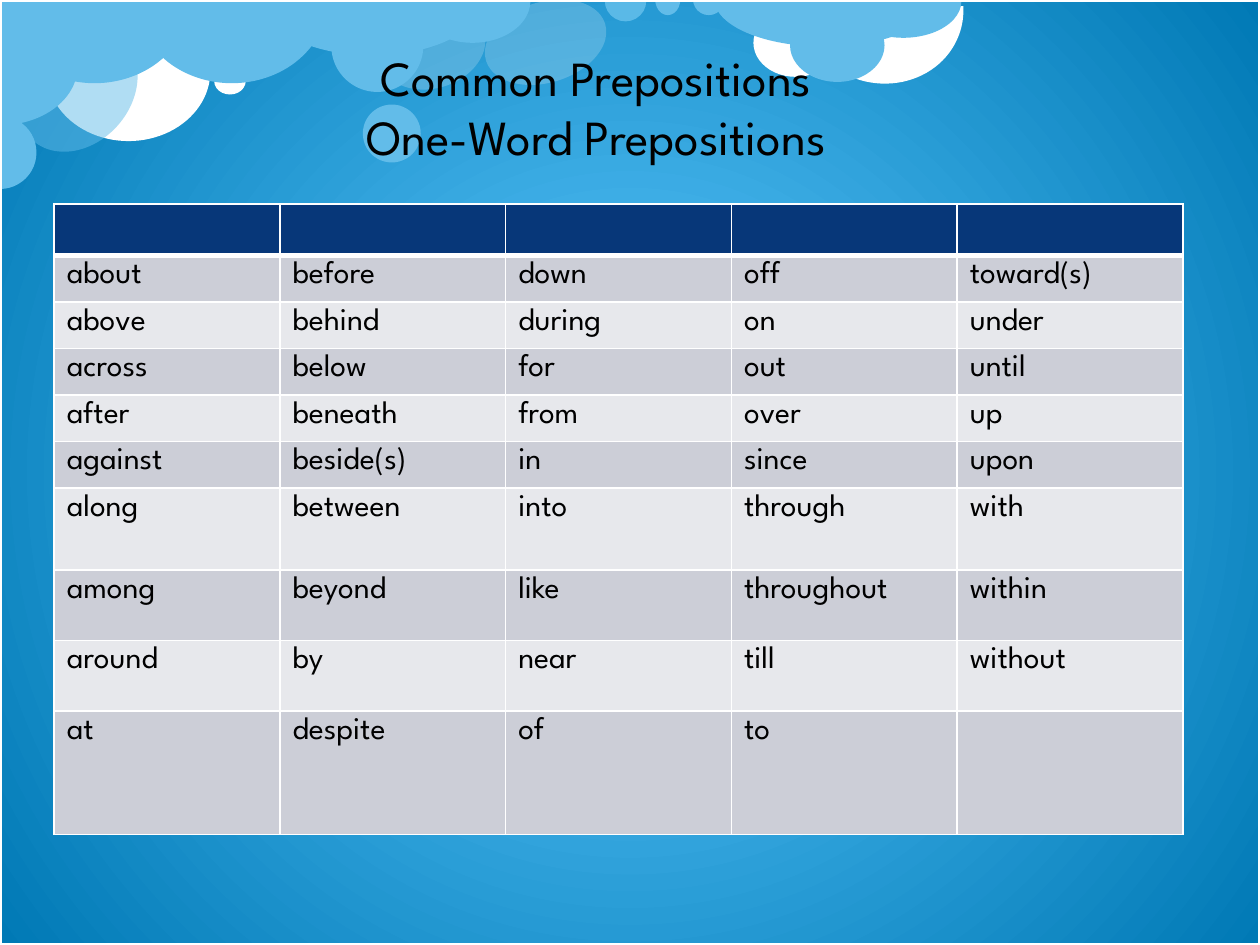
from lxml.etree import SubElement
from pptx import Presentation
from pptx.dml.color import RGBColor
from pptx.enum.shapes import MSO_SHAPE as Shape
from pptx.enum.text import MSO_AUTO_SIZE as AutoSize, PP_ALIGN as Align
from pptx.oxml import parse_xml
from pptx.oxml.ns import nsdecls, qn
from pptx.util import Inches, Pt

WHITE, SKY, PALE, NAVY = "FFFFFF", "62BCE9", "8FD9FB", "073779"
BANDS = ("CCCED7", "E7E8EC")
HALF = (0, 108)  # pie angles that leave the lower half

# kind, left, top, width, height, colour, opacity in percent, rotation, angles
OVAL, PIE, ARC = Shape.OVAL, Shape.PIE, Shape.ARC
CLOUDS = [
    (OVAL, 3.11, -0.05, 0.64, 0.86, WHITE, 20, 72.8),
    (OVAL, 0.37, 0.01, 1.3, 1.11, WHITE),
    (ARC, 6.39, -0.6, 1.21, 1.31, WHITE, 100, 106.5, (151.8, 44.48)),
    (OVAL, 5.98, 0.07, 0.67, 0.54, WHITE),
    (PIE, -0.01, -0.66, 1.52, 1.32, SKY),
    (PIE, 2.08, -0.44, 1.75, 0.88, SKY),
    (OVAL, 2.88, 0.83, 0.46, 0.46, SKY),
    (OVAL, 0.19, 0.18, 0.85, 1.07, SKY, 50, 41.8),
    (PIE, -0.29, 0.92, 0.58, 0.58, SKY, 100, 270),
    (OVAL, 1.7, 0.54, 0.25, 0.21, WHITE),
    (PIE, 1.08, -0.66, 1.52, 1.32, SKY),
    (PIE, 5.67, -0.38, 1.75, 0.75, SKY),
    (OVAL, 6.27, 0.07, 0.75, 0.58, SKY),
    (PIE, 6.71, -0.28, 0.92, 0.58, SKY),
    (OVAL, 4.01, -0.16, 0.64, 0.99, WHITE, 20, 72.8),
    (PIE, 4.8, -0.16, 0.33, 0.33, PALE, 50),
    (PIE, 5.2, -0.13, 0.2, 0.25, SKY),
    (PIE, 5.5, -0.13, 0.25, 0.25, SKY),
    (OVAL, 2.63, 0, 0.73, 0.73, SKY),
    (PIE, 3.29, -0.33, 0.92, 0.67, SKY),
    (PIE, -0.47, -0.09, 0.93, 1.24, SKY, 100, 270),
]

PREPOSITION_COLUMNS = [
    "about above across after against along among around at",
    "before behind below beneath beside(s) between beyond by despite",
    "down during for from in into like near of",
    "off on out over since through throughout till to",
    "toward(s) under until up upon with within without",
]
ROW_HEIGHTS = [0.37] * 6 + [0.65, 0.56, 0.56, 0.98]


def rgb(colour):
    return RGBColor.from_string(colour)


def lengths(*values):
    return [Inches(value) for value in values]


class SlideBuilder:
    font_name = "League Spartan"
    text_colour = "000000"

    def __init__(self, page):
        self.page = page

    def background(self, centre, edge):
        fill = self.page.background.fill
        fill.gradient()
        for stop, colour in zip(fill.gradient_stops, (centre, edge)):
            stop.color.rgb = rgb(colour)
        linear = next(self.page.element.iter(qn("a:lin")))
        linear.getparent().replace(linear, parse_xml(
            f'<a:path {nsdecls("a")} path="circle">'
            '<a:fillToRect l="50000" t="50000" r="50000" b="50000"/></a:path>'))

    def cloud(self, kind, left, top, width, height, colour,
              opacity=100, rotation=0, angles=HALF):
        puff = self.page.shapes.add_shape(kind, *lengths(left, top, width, height))
        puff.shadow.inherit = False
        puff.rotation = rotation
        puff.fill.solid()
        puff.fill.fore_color.rgb = rgb(colour)
        puff.line.fill.background()
        if kind != OVAL:
            puff.adjustments[0], puff.adjustments[1] = angles
        if opacity < 100:
            tint = next(puff.element.spPr.iter(qn("a:srgbClr")))
            SubElement(tint, qn("a:alpha"), val=str(opacity * 1000))

    def frame(self, width, height, colour, weight):
        border = self.page.shapes.add_shape(Shape.RECTANGLE, 0, 0, width, height)
        border.shadow.inherit = False
        border.fill.background()
        border.line.color.rgb = rgb(colour)
        border.line.width = Pt(weight)

    def style_text(self, para, size):
        para.font.size = Pt(size)
        for span in para.runs:
            span.font.name = self.font_name
            span.font.size = Pt(size)
            span.font.bold = False
            span.font.color.rgb = rgb(self.text_colour)

    def title(self, text, left, top, width, height):
        box = self.page.shapes.add_textbox(*lengths(left, top, width, height))
        box.text_frame.word_wrap = True
        box.text_frame.auto_size = AutoSize.SHAPE_TO_FIT_TEXT
        box.text_frame.text = text
        for para in box.text_frame.paragraphs:
            para.alignment = Align.CENTER
            self.style_text(para, 28)

    def cell_borders(self, cell, top=1, bottom=1):
        properties = cell._tc.get_or_add_tcPr()
        weights = {"L": 1, "R": 1, "T": top, "B": bottom}
        for index, (side, weight) in enumerate(weights.items()):
            properties.insert(index, parse_xml(
                f'<a:ln{side} {nsdecls("a")} w="{Pt(weight)}"><a:solidFill>'
                f'<a:srgbClr val="{WHITE}"/></a:solidFill></a:ln{side}>'))

    def word_table(self, columns, left, top, width, row_heights):
        """Draw the word columns under an empty header row."""
        table = self.page.shapes.add_table(
            len(row_heights), len(columns),
            *lengths(left, top, width, sum(row_heights))).table
        table.horz_banding = False
        for row, height in zip(table.rows, row_heights):
            row.height = Inches(height)
        for column, words in enumerate(columns):
            for row, word in enumerate([""] + words.split()):
                table.cell(row, column).text = word
        for row_index, row in enumerate(table.rows):
            for cell in row.cells:
                cell.fill.solid()
                band = BANDS[(row_index - 1) % 2] if row_index else NAVY
                cell.fill.fore_color.rgb = rgb(band)
                self.cell_borders(cell, top=3 if row_index == 1 else 1,
                                  bottom=3 if row_index == 0 else 1)
                self.style_text(cell.text_frame.paragraphs[0], 18)


def main():
    deck = Presentation()
    deck.slide_width, deck.slide_height = lengths(10, 7.5)
    builder = SlideBuilder(deck.slides.add_slide(deck.slide_layouts[6]))
    builder.background("5DC9FF", "0079B5")
    for cloud in CLOUDS:
        builder.cloud(*cloud)
    builder.frame(deck.slide_width, deck.slide_height, WHITE, 2)
    builder.word_table(PREPOSITION_COLUMNS, 0.43, 1.62, 8.96, ROW_HEIGHTS)
    builder.title("Common Prepositions\nOne-Word Prepositions", 0.66, 0.33, 8.14, 1.04)
    deck.save("out.pptx")


if __name__ == "__main__":
    main()
